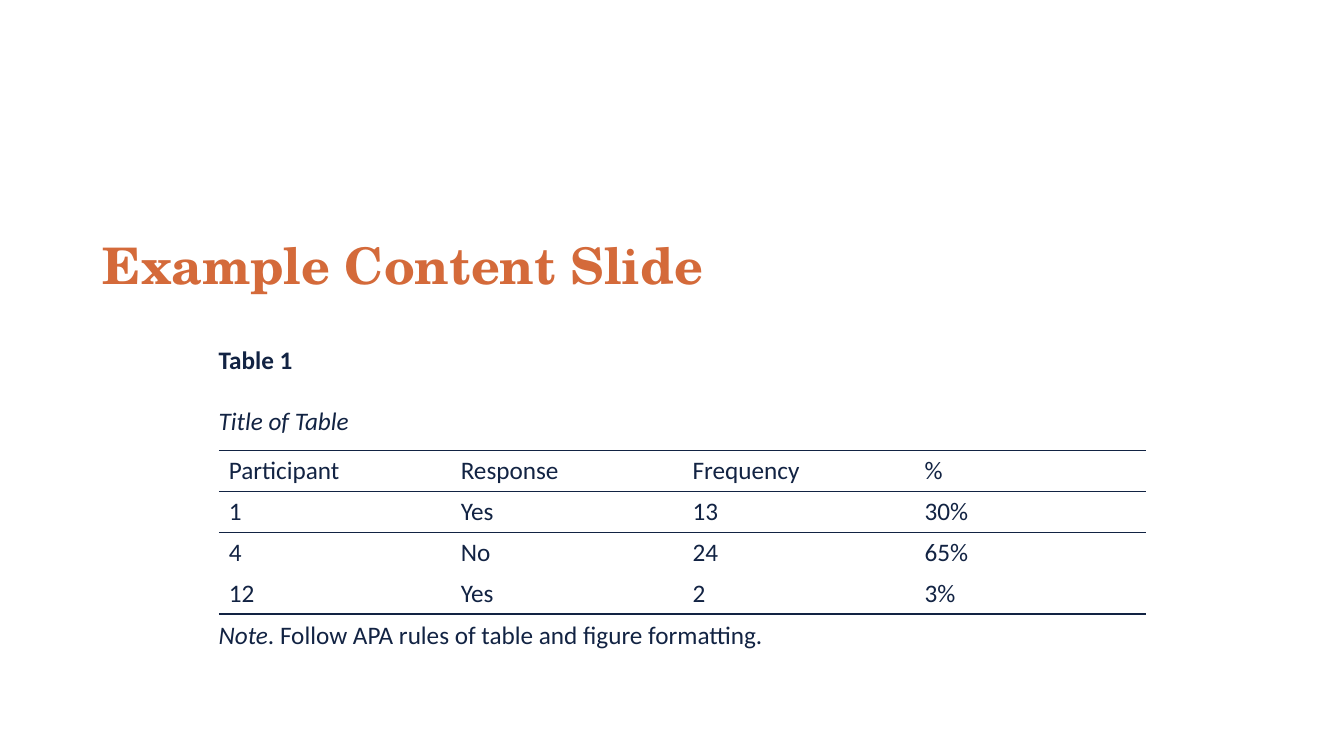
"""Build a content slide with a titled APA table and its note."""
from lxml.etree import SubElement
from pptx import Presentation
from pptx.dml.color import RGBColor
from pptx.enum.text import MSO_ANCHOR, MSO_AUTO_SIZE, PP_ALIGN
from pptx.oxml.ns import qn
from pptx.util import Inches, Pt

NAVY = RGBColor(0x12, 0x23, 0x43)
ORANGE = RGBColor(0xD4, 0x6A, 0x3A)
ROWS = [
    ("Participant", "Response", "Frequency", "%"),
    ("1", "Yes", "13", "30%"),
    ("4", "No", "24", "65%"),
    ("12", "Yes", "2", "3%"),
]
RULED = {0, 1, 2, len(ROWS)}


def style(font, bold=False, italic=False, size=18, name="Calibri", color=NAVY):
    font.name = name
    font.size = Pt(size)
    font.bold = bold
    font.italic = italic
    font.color.rgb = color


def add_title(slide, text):
    title = slide.shapes.title
    title.left, title.top = Inches(0.92), Inches(1.94)
    title.width, title.height = Inches(11.5), Inches(1.45)
    frame = title.text_frame
    frame.text = text
    frame.word_wrap = True
    frame.auto_size = MSO_AUTO_SIZE.NONE
    frame.vertical_anchor = MSO_ANCHOR.MIDDLE
    para = frame.paragraphs[0]
    para.alignment = PP_ALIGN.LEFT
    para.line_spacing = 0.9
    style(para.runs[0].font, bold=True, size=36, name="TeX Gyre Schola", color=ORANGE)


def add_box(slide, top, height):
    box = slide.shapes.add_textbox(Inches(2.07), Inches(top), Inches(7.53), Inches(height))
    box.text_frame.word_wrap = True
    return box.text_frame


def add_run(para, text, **look):
    run = para.add_run()
    run.text = text
    style(run.font, **look)


def set_edges(cell, top, bottom):
    props = cell._tc.get_or_add_tcPr()
    edges = (("L", False), ("R", False), ("T", top), ("B", bottom))
    for index, (side, ruled) in enumerate(edges):
        line = SubElement(props, qn(f"a:ln{side}"), w=str(Pt(1)))
        if ruled:
            fill = SubElement(line, qn("a:solidFill"))
            SubElement(fill, qn("a:srgbClr"), val=str(NAVY))
        else:
            SubElement(line, qn("a:noFill"))
        props.insert(index, line)


def add_table(slide):
    table = slide.shapes.add_table(
        len(ROWS), len(ROWS[0]), Inches(2.17), Inches(4.47), Inches(9.2), Inches(1.62)
    ).table
    table.first_row = False
    table.horz_banding = False
    for row, values in enumerate(ROWS):
        for col, value in enumerate(values):
            cell = table.cell(row, col)
            cell.text_frame.text = value
            style(cell.text_frame.paragraphs[0].runs[0].font)
            cell.fill.background()
            set_edges(cell, row in RULED, row + 1 in RULED)


def main():
    deck = Presentation()
    deck.slide_width, deck.slide_height = Inches(13.33), Inches(7.5)
    slide = deck.slides.add_slide(deck.slide_layouts[5])
    add_title(slide, "Example Content Slide")
    add_table(slide)
    note = add_box(slide, 6.09, 0.4).paragraphs[0]
    add_run(note, "Note", italic=True)
    add_run(note, ". Follow APA rules of table and figure formatting.")
    label = add_box(slide, 3.37, 1.01)
    add_run(label.paragraphs[0], "Table 1", bold=True)
    name = label.add_paragraph()
    name.space_before = Pt(22)
    add_run(name, "Title of Table", italic=True)
    deck.save("out.pptx")


if __name__ == "__main__":
    main()
